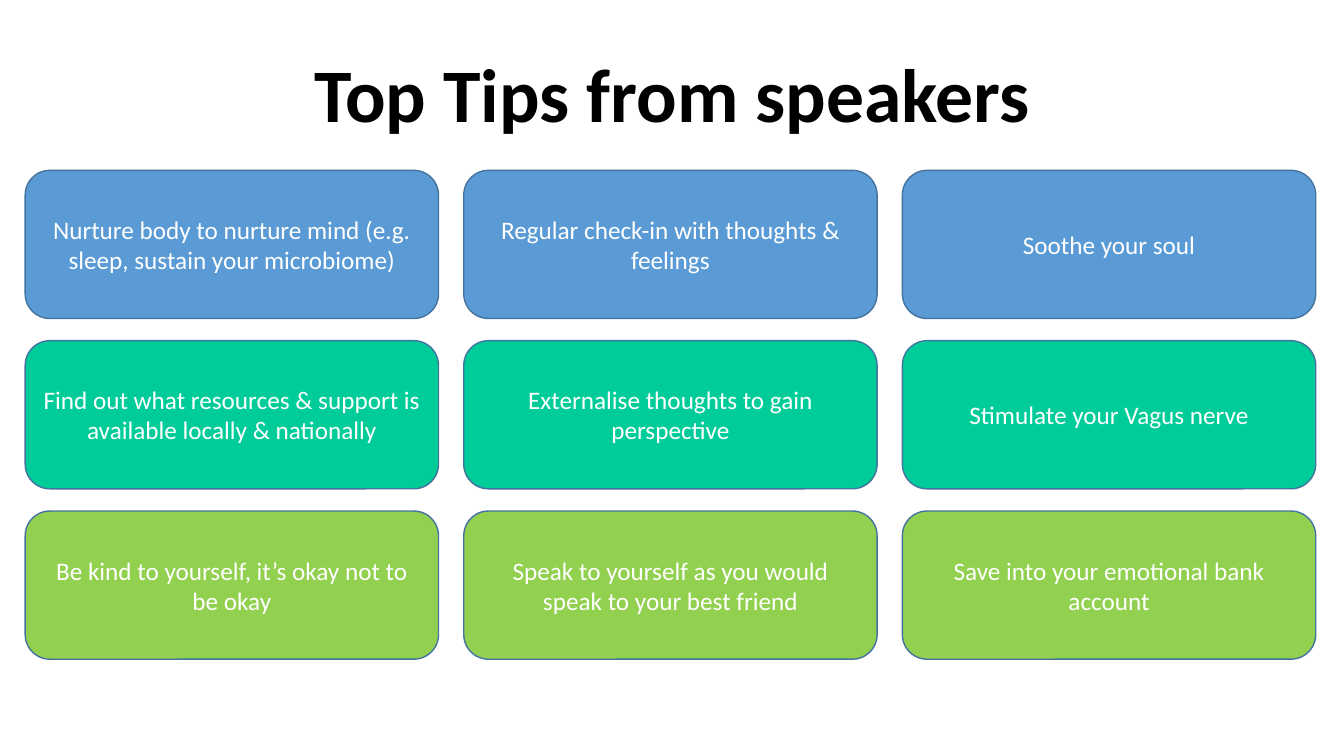
from pptx import Presentation
from pptx.dml.color import RGBColor
from pptx.enum.shapes import MSO_SHAPE
from pptx.enum.text import MSO_ANCHOR, MSO_AUTO_SIZE, PP_ALIGN
from pptx.util import Inches, Pt

COLORS = {
    "title": "000000",
    "tip_text": "FFFFFF",
    "outline": "43739E",
    "blue": "5B9BD5",
    "teal": "00CC99",
    "green": "92D050",
}

TIP_ROWS = [
    ("blue", [
        "Nurture body to nurture mind (e.g. sleep, sustain your microbiome)",
        "Regular check-in with thoughts & feelings",
        "Soothe your soul",
    ]),
    ("teal", [
        "Find out what resources & support is available locally & nationally",
        "Externalise thoughts to gain perspective",
        "Stimulate your Vagus nerve",
    ]),
    ("green", [
        "Be kind to yourself, it’s okay not to be okay",
        "Speak to yourself as you would speak to your best friend",
        "Save into your emotional bank account",
    ]),
]

GRID_LEFT, GRID_TOP = 0.25, 1.69
COLUMN_STEP, ROW_STEP = 4.35, 1.69
CARD_WIDTH, CARD_HEIGHT = 4.1, 1.47


class TipsSlide:
    font = "Calibri"

    def __init__(self, presentation):
        self.slide = presentation.slides.add_slide(presentation.slide_layouts[5])

    def color(self, name):
        return RGBColor.from_string(COLORS[name])

    def set_wording(self, frame, wording, size, color, bold=False):
        frame.text = wording
        frame.word_wrap = True
        frame.auto_size = MSO_AUTO_SIZE.NONE
        frame.vertical_anchor = MSO_ANCHOR.MIDDLE
        paragraph = frame.paragraphs[0]
        paragraph.alignment = PP_ALIGN.CENTER
        font = paragraph.runs[0].font
        font.name = self.font
        font.size = Pt(size)
        font.bold = bold
        font.color.rgb = self.color(color)

    def title(self, wording, left, top, width, height):
        heading = self.slide.shapes.title
        heading.left, heading.top = Inches(left), Inches(top)
        heading.width, heading.height = Inches(width), Inches(height)
        self.set_wording(heading.text_frame, wording, 54, "title", bold=True)
        heading.text_frame.paragraphs[0].line_spacing = 0.9

    def card(self, tip, left, top, fill):
        card = self.slide.shapes.add_shape(
            MSO_SHAPE.ROUNDED_RECTANGLE,
            Inches(left), Inches(top), Inches(CARD_WIDTH), Inches(CARD_HEIGHT),
        )
        card.shadow.inherit = False
        card.fill.solid()
        card.fill.fore_color.rgb = self.color(fill)
        card.line.color.rgb = self.color("outline")
        card.line.width = Pt(1)
        self.set_wording(card.text_frame, tip, 18, "tip_text")


def main():
    presentation = Presentation()
    presentation.slide_width = Inches(13.33)
    presentation.slide_height = Inches(7.5)
    tips_slide = TipsSlide(presentation)
    tips_slide.title("Top Tips from speakers", 0.92, 0.25, 11.5, 1.45)
    for row, (fill, tips) in enumerate(TIP_ROWS):
        for column, tip in enumerate(tips):
            left = GRID_LEFT + column * COLUMN_STEP
            top = GRID_TOP + row * ROW_STEP
            tips_slide.card(tip, left, top, fill)
    presentation.save("out.pptx")


if __name__ == "__main__":
    main()
